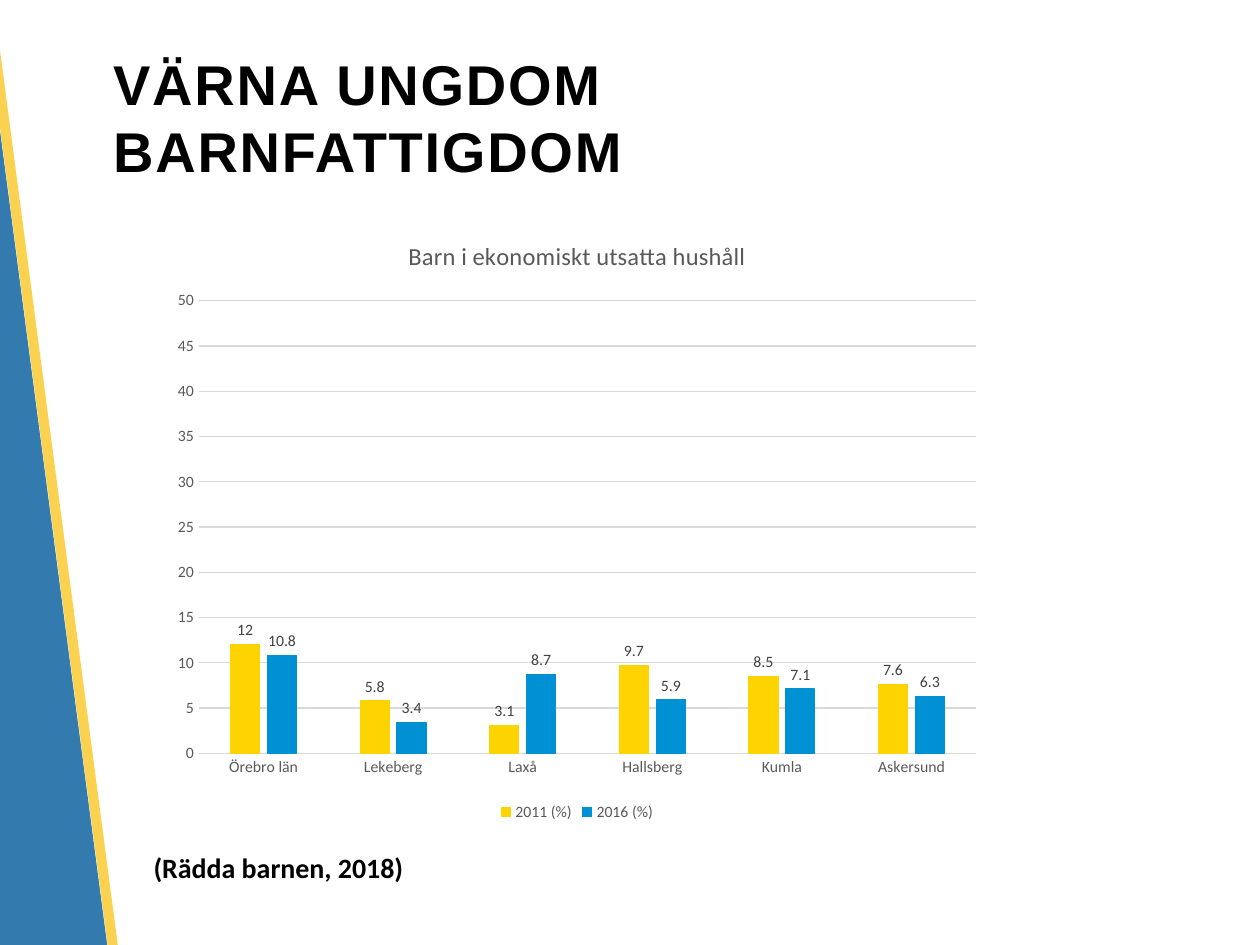
import pptx
import pptx.chart.data
import pptx.dml.color
import pptx.enum.chart
import pptx.enum.shapes
import pptx.enum.text
import pptx.oxml.ns
import pptx.util
from lxml import etree

WIDTH, HEIGHT = 10, 7.5
GREY, GRID = "595959", "D9D9D9"
CATEGORIES = ["Örebro län", "Lekeberg", "Laxå", "Hallsberg", "Kumla", "Askersund"]
SERIES = [
    ("2011 (%)", "FDD400", [12, 5.8, 3.1, 9.7, 8.5, 7.6]),
    ("2016 (%)", "0090D4", [10.8, 3.4, 8.7, 5.9, 7.1, 6.3]),
]


def color(value):
    return pptx.dml.color.RGBColor.from_string(value)


def inches(box):
    return [pptx.util.Inches(length) for length in box]


def style_font(font, size, value, name="Calibri", bold=False):
    font.name, font.bold = name, bold
    font.size = pptx.util.Pt(size)
    font.color.rgb = color(value)


def style_line(line, value):
    line.color.rgb = color(value)
    line.width = pptx.util.Pt(0.75)


def add_band(page, box, fill, opacity):
    """Add a slanted, see-through stripe along the left edge."""
    band = page.shapes.add_shape(
        pptx.enum.shapes.MSO_SHAPE.RECTANGLE, *inches(box))
    band.rotation = 352.5
    band.shadow.inherit = False
    band.line.fill.background()
    band.fill.solid()
    band.fill.fore_color.rgb = color(fill)
    tone = band.fill._xPr.find(".//" + pptx.oxml.ns.qn("a:srgbClr"))
    etree.SubElement(tone, pptx.oxml.ns.qn("a:alpha"), val=str(opacity * 1000))


def add_heading(page, box, lines):
    heading = page.shapes.add_textbox(*inches(box))
    frame = heading.text_frame
    frame.word_wrap = True
    frame.vertical_anchor = pptx.enum.text.MSO_ANCHOR.MIDDLE
    para = frame.paragraphs[0]
    for index, line in enumerate(lines):
        if index:
            para.add_line_break()
        span = para.add_run()
        span.text = line
        style_font(span.font, 32, "000000", "Arial", bold=True)
        span.font._element.set("spc", "100")


def add_source(page, box, text):
    source = page.shapes.add_textbox(*inches(box))
    source.text_frame.word_wrap = False
    source.text_frame.auto_size = pptx.enum.text.MSO_AUTO_SIZE.SHAPE_TO_FIT_TEXT
    span = source.text_frame.paragraphs[0].add_run()
    span.text = text
    style_font(span.font, 16, "000000", bold=True)


def style_axes(chart):
    for axis in (chart.category_axis, chart.value_axis):
        axis.major_tick_mark = pptx.enum.chart.XL_TICK_MARK.NONE
        axis.minor_tick_mark = pptx.enum.chart.XL_TICK_MARK.NONE
        style_font(axis.tick_labels.font, 9, GREY)
    style_line(chart.category_axis.format.line, GRID)
    scale = chart.value_axis
    scale.minimum_scale, scale.maximum_scale, scale.major_unit = 0, 50, 5
    scale.format.line.fill.background()
    scale.has_major_gridlines = True
    style_line(scale.major_gridlines.format.line, GRID)


def style_columns(plot):
    plot.vary_by_categories = False
    plot.gap_width, plot.overlap = 219, -27
    for series, (name, fill, values) in zip(plot.series, SERIES):
        series.format.fill.solid()
        series.format.fill.fore_color.rgb = color(fill)
        style_line(series.format.line, fill)
        labels = series.data_labels
        labels.show_value = True
        labels.position = pptx.enum.chart.XL_LABEL_POSITION.OUTSIDE_END
        style_font(labels.font, 9, "404040")


def add_poverty_chart(page, box, title):
    data = pptx.chart.data.CategoryChartData()
    data.categories = CATEGORIES
    for name, fill, values in SERIES:
        data.add_series(name, values)
    chart = page.shapes.add_chart(
        pptx.enum.chart.XL_CHART_TYPE.COLUMN_CLUSTERED, *inches(box), data).chart
    style_font(chart.font, 10, "000000")
    chart.has_title = True
    span = chart.chart_title.text_frame.paragraphs[0].add_run()
    span.text = title
    style_font(span.font, 14, GREY)
    chart.chart_title.include_in_layout = False
    chart.has_legend = True
    chart.legend.position = pptx.enum.chart.XL_LEGEND_POSITION.BOTTOM
    chart.legend.include_in_layout = False
    style_font(chart.legend.font, 9, GREY)
    style_axes(chart)
    style_columns(chart.plots[0])


def main():
    deck = pptx.Presentation()
    deck.slide_width, deck.slide_height = inches((WIDTH, HEIGHT))
    page = deck.slides.add_slide(deck.slide_layouts[6])
    add_band(page, (-0.52, -1.64, 0.91, 11.33), "005B9C", 80)
    add_band(page, (0.38, -1.77, 0.08, 11.32), "FAC828", 81)
    add_heading(page, (0.08 * WIDTH, 0.04 * HEIGHT, 8.65, 1.25),
                ["VÄRNA UNGDOM", "BARNFATTIGDOM"])
    add_poverty_chart(page, (1.28, 1.71, 0.66 * WIDTH, 4.85),
                      "Barn i ekonomiskt utsatta hushåll")
    add_source(page, (1.12, 6.7, 2.21, 0.37), "(Rädda barnen, 2018)")
    deck.save("out.pptx")


if __name__ == "__main__":
    main()
